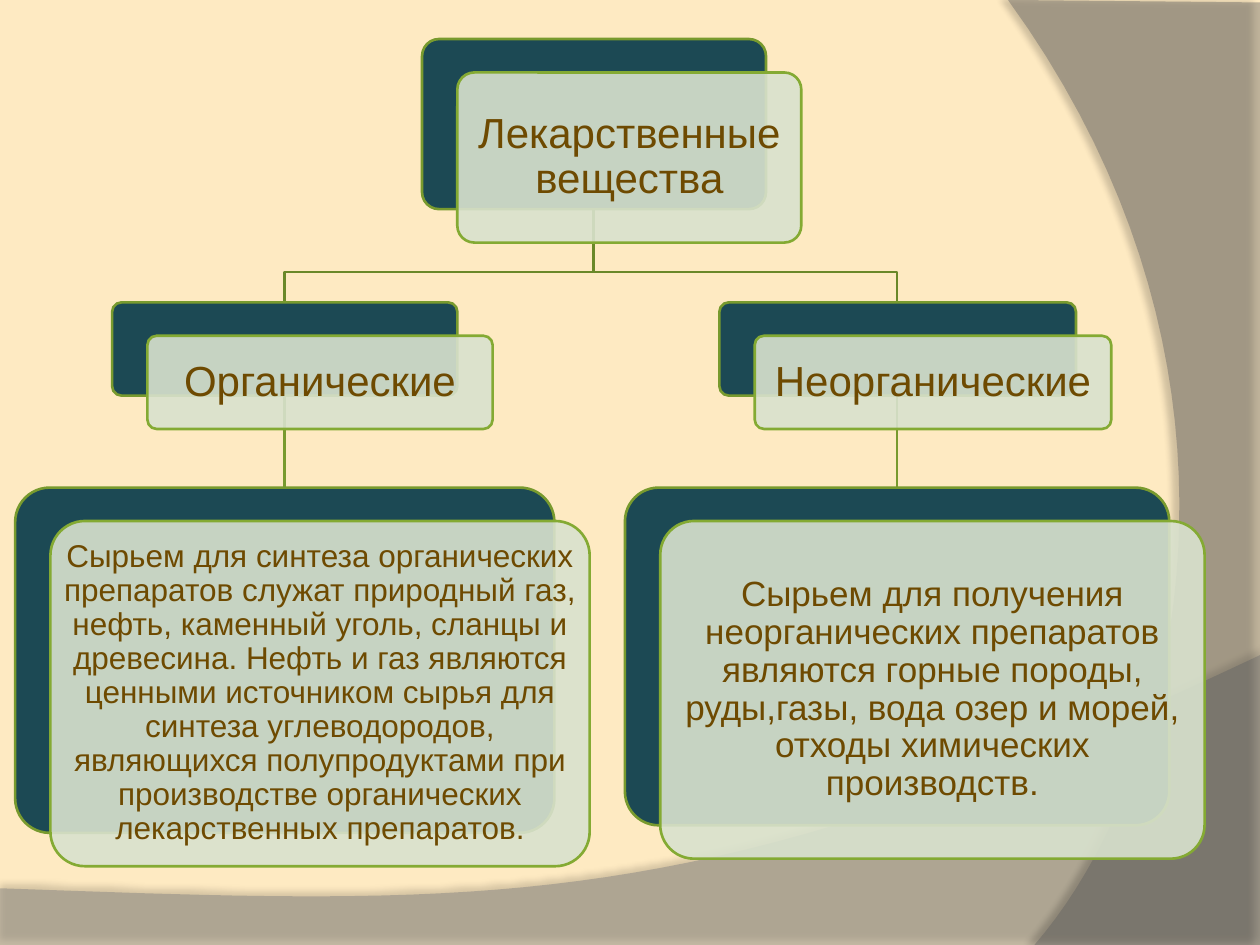
from lxml.etree import SubElement
from pptx import Presentation
from pptx.dml.color import RGBColor
from pptx.enum.shapes import MSO_CONNECTOR, MSO_SHAPE
from pptx.enum.text import MSO_ANCHOR, MSO_AUTO_SIZE, PP_ALIGN
from pptx.oxml.ns import qn
from pptx.util import Inches, Pt

THEME = {
    "background": "FEEAC2", "bottom wave": "7F7F7F", "side wave": "5E5E5E",
    "back card": "1C4954", "front card": "D9E2CE", "text": "6E4A01",
    "back border": "789A2E", "front border": "84AA33", "branch": "6A8829",
    "font": "Arial", "heading": Pt(24), "organic": Pt(18), "inorganic": Pt(20),
    "border width": Pt(1.5),
}

presentation = Presentation()
presentation.slide_width, presentation.slide_height = Inches(10), Inches(7.5)
column = presentation.slide_width / 100
row = presentation.slide_height / 75
slide = presentation.slides.add_slide(presentation.slide_layouts[5])
shapes = slide.shapes
slide.background.fill.solid()
slide.background.fill.fore_color.rgb = RGBColor.from_string(THEME["background"])


def draw_outline(points, closed):
    scaled = [(x * column, y * row) for x, y in points]
    builder = shapes.build_freeform(*scaled[0])
    builder.add_line_segments(scaled[1:], close=closed)
    return builder.convert_to_shape()


def paint(shape, fill=None, opacity=100, border=None):
    shape.shadow.inherit = False
    if fill:
        shape.fill.solid()
        shape.fill.fore_color.rgb = RGBColor.from_string(THEME[fill])
        color = shape.element.spPr.find(".//" + qn("a:srgbClr"))
        SubElement(color, qn("a:alpha"), val=str(opacity * 1000))
    else:
        shape.fill.background()
    if border:
        shape.line.color.rgb = RGBColor.from_string(THEME[border])
        shape.line.width = THEME["border width"]
    else:
        shape.line.fill.background()


waves = [
    ("bottom wave", 45, [(0, 75), (100, 75)],
     [(100, 52), (55.9, 72.9), (39.1, 71.9), (0, 70.5)], (35, 4, 3.5, 270)),
    ("side wave", 40, [(100, 0.2), (100, 75)],
     [(82.1, 75), (93.5, 61.9), (101.8, 30), (80, 0)], (45, 4, 4, 180)),
]
steps = 40
for fill, opacity, corners, controls, (strength, blur, distance, angle) in waves:
    curve = []
    for step in range(steps + 1):
        t = step / steps
        weights = ((1 - t) ** 3, 3 * t * (1 - t) ** 2, 3 * t * t * (1 - t), t ** 3)
        curve.append([sum(w * p[axis] for w, p in zip(weights, controls)) for axis in (0, 1)])
    wave = draw_outline(corners + curve, True)
    paint(wave, fill, opacity)
    effects = wave.element.spPr.find(qn("a:effectLst"))
    shadow = SubElement(effects, qn("a:outerShdw"), blurRad=str(Pt(blur)),
                        dist=str(Pt(distance)), dir=str(angle * 60000), rotWithShape="0")
    shadow_color = SubElement(shadow, qn("a:srgbClr"), val="000000")
    SubElement(shadow_color, qn("a:alpha"), val=str(strength * 1000))

root_center, root_bottom, branch_turn = 47.1, 16.6, 21.6
class_top, class_bottom, detail_top = 24, 31.3, 38.7
for center in (71.2, 22.6):
    stem = shapes.add_connector(
        MSO_CONNECTOR.STRAIGHT, *map(round, (center * column, class_bottom * row,
                                             center * column, detail_top * row)))
    stem.line.color.rgb = RGBColor.from_string(THEME["back border"])
    stem.line.width = THEME["border width"]
    SubElement(stem.element.spPr, qn("a:effectLst"))
    branch = draw_outline([(root_center, root_bottom), (root_center, branch_turn),
                           (center, branch_turn), (center, class_top)], False)
    paint(branch, border="branch")

cards = [
    (33.5, 3.1, 27.3, 13.5, "heading", 0.1, "Лекарственные вещества"),
    (8.9, class_top, 27.4, 7.4, "heading", 0.08, "Органические"),
    (1.2, detail_top, 42.8, 27.4, "organic", 0,
     "Сырьем для синтеза органических препаратов служат природный газ, нефть, "
     "каменный уголь, сланцы и древесина. Нефть и газ являются ценными источником "
     "сырья для синтеза углеводородов, являющихся полупродуктами при производстве "
     "органических лекарственных препаратов."),
    (57.1, class_top, 28.3, 7.4, "heading", 0.08, "Неорганические"),
    (49.6, detail_top, 43.2, 26.8, "inorganic", 0,
     "Сырьем для получения неорганических препаратов являются горные породы, "
     "руды,газы, вода озер и морей, отходы химических производств."),
]
title = shapes.title
for index, (left, top, width, height, size, inset, text) in enumerate(cards):
    for shift_x, shift_y, fill, opacity, border in (
            (0, 0, "back card", 100, "back border"),
            (2.8, 2.65, "front card", 90, "front border")):
        frame_box = [round(v) for v in ((left + shift_x) * column, (top + shift_y) * row,
                                        width * column, height * row)]
        card = shapes.add_shape(MSO_SHAPE.ROUNDED_RECTANGLE, *frame_box)
        card.adjustments[0] = 0.1
        paint(card, fill, opacity, border)
    label = card
    if index == 0:
        label = title
        for name, value in zip(("left", "top", "width", "height"), frame_box):
            setattr(title, name, value)
        title.element.getparent().append(title.element)
    frame = label.text_frame
    frame.text = text
    paragraph = frame.paragraphs[0]
    font = paragraph.runs[0].font
    margins = {f"margin_{side}": Inches(inset) for side in ("left", "right", "top", "bottom")}
    formats = [
        (frame, {"word_wrap": True, "auto_size": MSO_AUTO_SIZE.NONE,
                 "vertical_anchor": MSO_ANCHOR.MIDDLE, **margins}),
        (paragraph, {"alignment": PP_ALIGN.CENTER, "line_spacing": 0.9}),
        (font, {"name": THEME["font"], "size": THEME[size]}),
        (font.color, {"rgb": RGBColor.from_string(THEME["text"])}),
    ]
    for target, values in formats:
        for name, value in values.items():
            setattr(target, name, value)

presentation.save("out.pptx")
